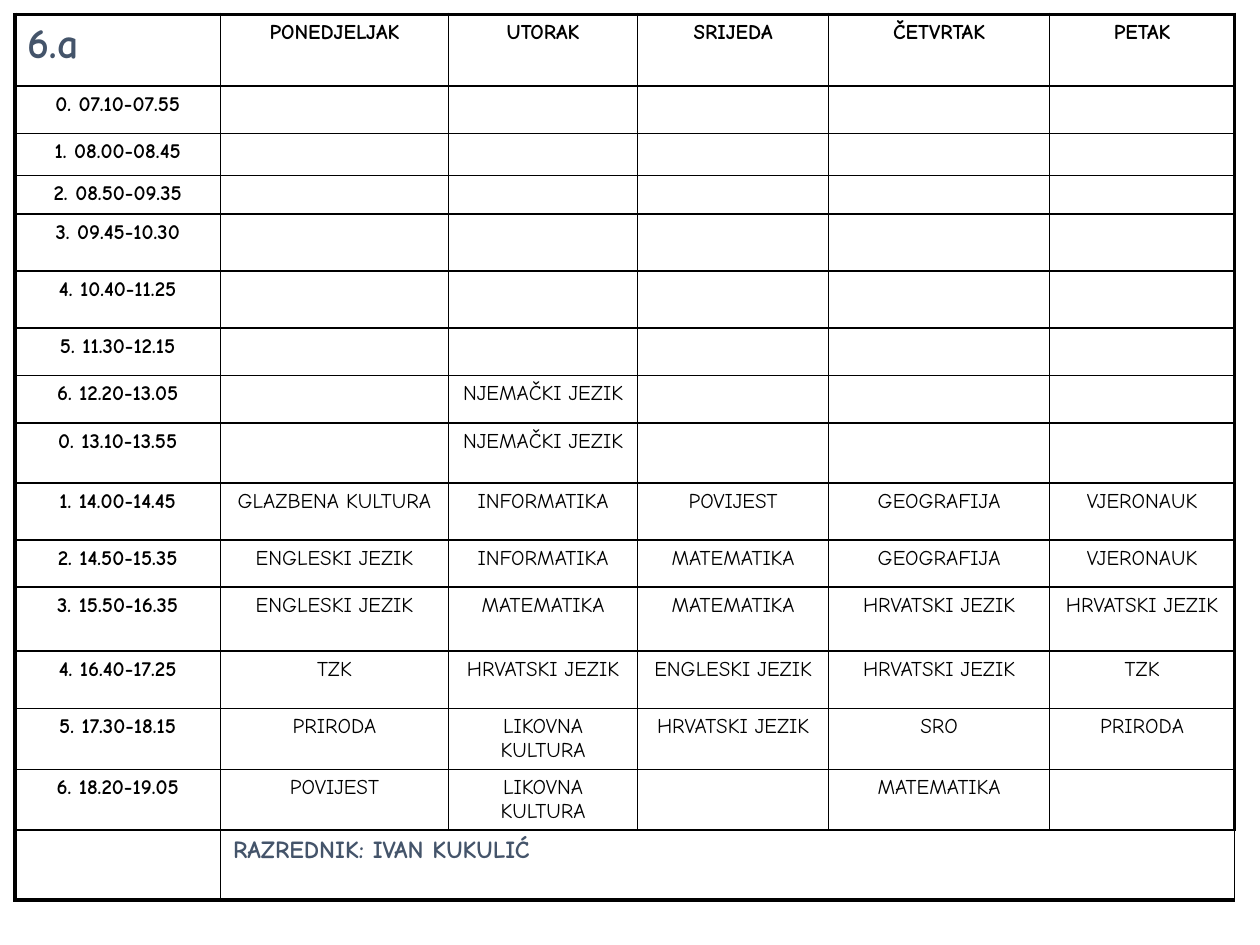
from lxml.etree import SubElement
from pptx import Presentation
from pptx.dml.color import RGBColor
from pptx.enum.text import PP_ALIGN as Align
from pptx.oxml.ns import qn
from pptx.util import Pt

COLS = [117.4, 130.4, 108, 109.2, 126.2, 105.8]
ROWS = [41, 27.2, 24, 20.6, 32.6, 32.6, 27.2, 27.2,
        34.2, 32.6, 27, 36.6, 32.6, 34.8, 34.8, 40]
DAYS = ["PONEDJELJAK", "UTORAK", "SRIJEDA", "ČETVRTAK", "PETAK"]
LESSONS = [
    ("0. 07.10-07.55",),
    ("1. 08.00-08.45",),
    ("2. 08.50-09.35",),
    ("3. 09.45-10.30",),
    ("4. 10.40-11.25",),
    ("5. 11.30-12.15",),
    ("6. 12.20-13.05", "", "NJEMAČKI JEZIK"),
    ("0. 13.10-13.55", "", "NJEMAČKI JEZIK"),
    ("1. 14.00-14.45", "GLAZBENA KULTURA", "INFORMATIKA", "POVIJEST",
     "GEOGRAFIJA", "VJERONAUK"),
    ("2. 14.50-15.35", "ENGLESKI JEZIK", "INFORMATIKA", "MATEMATIKA",
     "GEOGRAFIJA", "VJERONAUK"),
    ("3. 15.50-16.35", "ENGLESKI JEZIK", "MATEMATIKA", "MATEMATIKA",
     "HRVATSKI JEZIK", "HRVATSKI JEZIK"),
    ("4. 16.40-17.25", "TZK", "HRVATSKI JEZIK", "ENGLESKI JEZIK",
     "HRVATSKI JEZIK", "TZK"),
    ("5. 17.30-18.15", "PRIRODA", "LIKOVNA KULTURA", "HRVATSKI JEZIK",
     "SRO", "PRIRODA"),
    ("6. 18.20-19.05", "POVIJEST", "LIKOVNA KULTURA", "", "MATEMATIKA"),
]


def rgb(color):
    return RGBColor.from_string(color)


def write(tf, text, size=12, color="000000", bold=False, align=Align.CENTER,
          font="Comic Neue"):
    p = tf.paragraphs[0]
    p.alignment = align
    if not text:
        p._p.get_or_add_endParaRPr().set("sz", str(size * 100))
        return
    r = p.add_run()
    r.text = text
    r.font.name = font
    r.font.size = Pt(size)
    r.font.bold = bold
    r.font.color.rgb = rgb(color)


class Timetable:
    ink = "000000"
    accent = "44546A"
    thin = 1
    thick = 2.25

    def __init__(self, slide):
        self.slide = slide

    def borders(self, cell, widths):
        tc_pr = cell._tc.get_or_add_tcPr()
        for i, (side, width) in enumerate(widths.items()):
            ln = SubElement(tc_pr, qn(f"a:ln{side}"), w=str(Pt(width)))
            fill = SubElement(ln, qn("a:solidFill"))
            SubElement(fill, qn("a:srgbClr"), val=self.ink)
            tc_pr.insert(i, ln)

    def table(self, left, top, cols, rows):
        frame = self.slide.shapes.add_table(
            len(rows), len(cols), Pt(left), Pt(top), Pt(sum(cols)), Pt(sum(rows)))
        table = frame.table
        table.first_row = table.horz_banding = False
        for col, width in zip(table.columns, cols):
            col.width = Pt(width)
        for row, height in zip(table.rows, rows):
            row.height = Pt(height)
        last_row, last_col = len(rows) - 1, len(cols) - 1
        for i in range(len(rows)):
            for j in range(len(cols)):
                cell = table.cell(i, j)
                cell.fill.background()
                edges = {"L": j == 0, "R": j == last_col,
                         "T": i == 0, "B": i == last_row}
                self.borders(cell, {side: self.thick if outer else self.thin
                                    for side, outer in edges.items()})
        return table

    def title(self, cell, text, size):
        write(cell.text_frame, text, size=size, color=self.accent, bold=True,
              align=Align.LEFT)

    def entry(self, cell, text, bold=False):
        write(cell.text_frame, text, color=self.ink, bold=bold)


def main():
    prs = Presentation()
    prs.slide_width, prs.slide_height = Pt(720), Pt(540)
    s = prs.slides.add_slide(prs.slide_layouts[6])
    timetable = Timetable(s)
    table = timetable.table(8.6, 8.2, COLS, ROWS)

    timetable.title(table.cell(0, 0), "6.a", 24)
    for j, day in enumerate(DAYS, 1):
        timetable.entry(table.cell(0, j), day, bold=True)
    for i, lesson in enumerate(LESSONS, 1):
        for j in range(len(COLS)):
            text = lesson[j] if j < len(lesson) else ""
            timetable.entry(table.cell(i, j), text, bold=j == 0)

    footer = len(ROWS) - 1
    timetable.entry(table.cell(footer, 0), "")
    teacher = table.cell(footer, 1)
    teacher.merge(table.cell(footer, len(COLS) - 1))
    timetable.title(teacher, "RAZREDNIK: IVAN KUKULIĆ", 14)
    prs.save("out.pptx")


if __name__ == "__main__":
    main()
